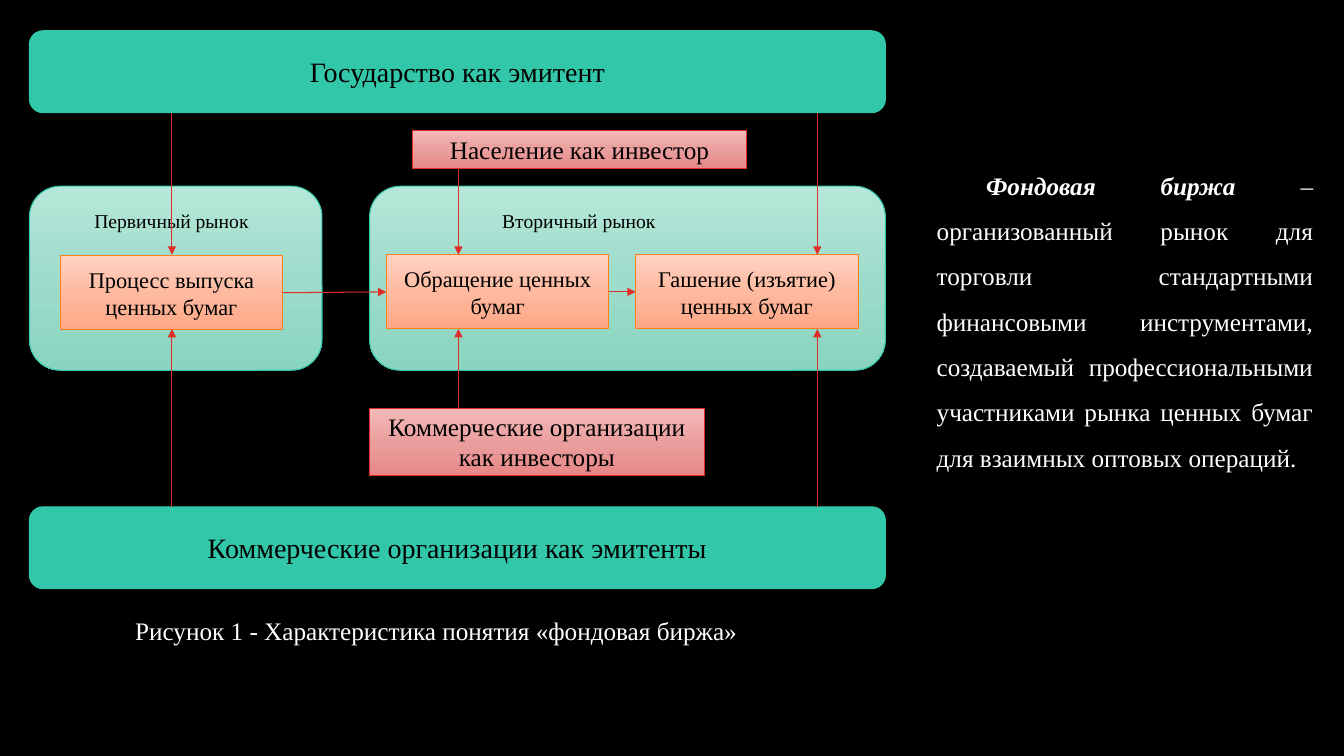
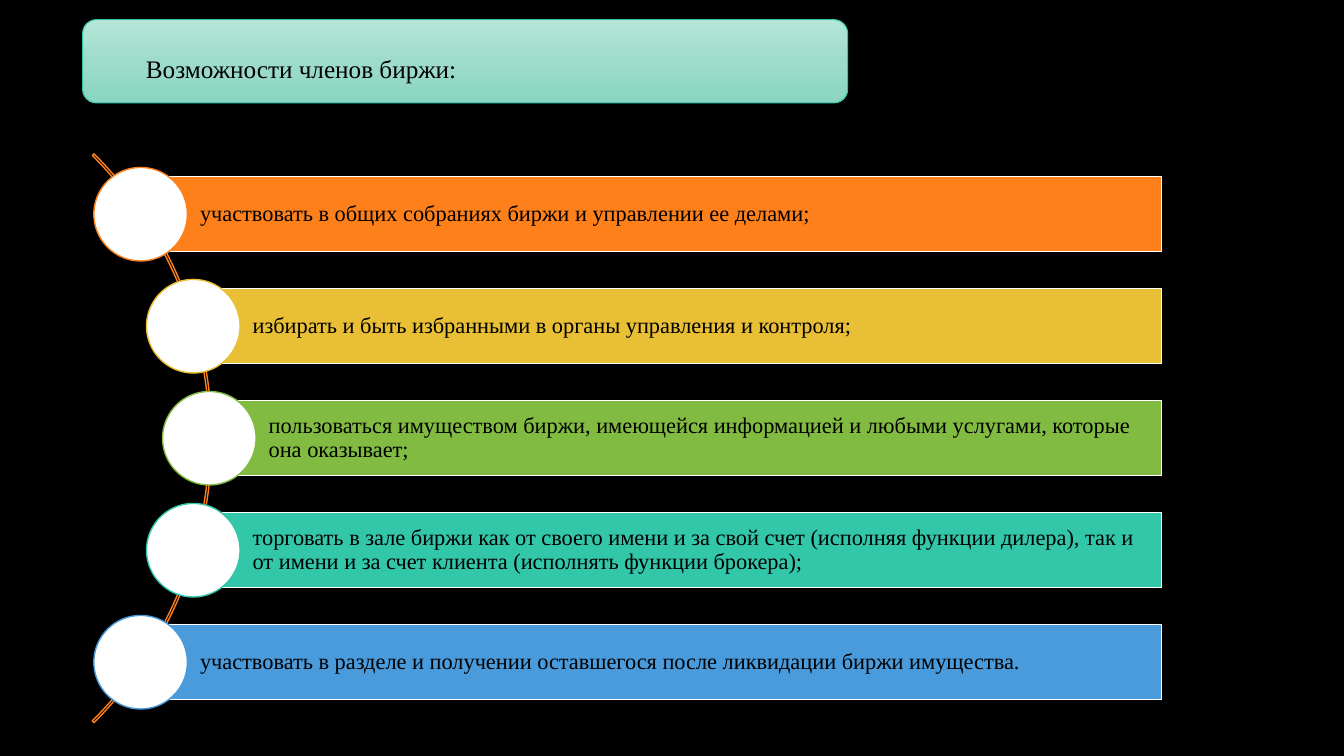
from copy import deepcopy
from dataclasses import dataclass
from math import sqrt

from pptx import Presentation
from pptx.dml.color import RGBColor
from pptx.enum.shapes import MSO_CONNECTOR, MSO_SHAPE
from pptx.enum.text import MSO_ANCHOR, MSO_AUTO_SIZE, PP_ALIGN
from pptx.oxml.ns import qn
from pptx.oxml.xmlchemy import OxmlElement
from pptx.util import Pt


@dataclass(frozen=True)
class Theme:
    font: str = "Times New Roman"
    black: str = "000000"
    white: str = "FFFFFF"
    teal: str = "32C7A9"
    orange: str = "FE801A"
    yellow: str = "E9BF35"
    green: str = "81BB42"
    blue: str = "4A9BDC"
    red: str = "DF2E28"
    mint_fade: tuple = ("B6E7D9", "9DDBCA", "89D5C0")
    peach_fade: tuple = ("FFD2C2", "FEB99F", "FEA785")
    rose_fade: tuple = ("F3BAB9", "EA9E9D", "E78887")
    band_size: int = 20
    body_size: int = 18
    step_size: int = 16
    label_size: int = 14
    first_line: float = 35.3
    body_spacing: float = 1.5
    thin: float = 0.75


THEME = Theme()
FADE_STOPS = (0, 0.52, 1)


def rgb(value):
    return RGBColor.from_string(value)


def new_slide(deck):
    slide = deck.slides.add_slide(deck.slide_layouts[6])
    slide.background.fill.solid()
    slide.background.fill.fore_color.rgb = rgb(THEME.black)
    return slide


def write_text(frame, text, lead="", size=THEME.body_size, color=THEME.black,
               align=PP_ALIGN.CENTER, anchor=MSO_ANCHOR.MIDDLE,
               spacing=None, first_line=0, insets=None):
    """Write one paragraph, with an optional bold italic lead-in."""
    frame.word_wrap = True
    frame.vertical_anchor = anchor
    if insets:
        (frame.margin_left, frame.margin_top,
         frame.margin_right, frame.margin_bottom) = map(Pt, insets)
    paragraph = frame.paragraphs[0]
    paragraph.alignment = align
    if spacing:
        paragraph.line_spacing = spacing
    if first_line:
        paragraph._p.get_or_add_pPr().set("indent", str(Pt(first_line)))
    for words, stressed in ((lead, True), (text, False)):
        if words:
            run = paragraph.add_run()
            run.text = words
            run.font.name = THEME.font
            run.font.size = Pt(size)
            run.font.color.rgb = rgb(color)
            run.font.bold = run.font.italic = stressed


def fade(shape, colors):
    """Fill a shape with a three-stop gradient from top to bottom."""
    shape.fill.gradient()
    shape.fill.gradient_angle = 270
    stops = shape._element.spPr.find(qn("a:gradFill")).find(qn("a:gsLst"))
    stops.append(deepcopy(stops[0]))
    for stop, position, color in zip(shape.fill.gradient_stops, FADE_STOPS, colors):
        stop.position = position
        stop.color.rgb = rgb(color)


def add_box(slide, kind, at, fill, line, width=THEME.thin, text="", **style):
    shape = slide.shapes.add_shape(kind, *map(Pt, at))
    shape.shadow.inherit = False
    if fill is None:
        shape.fill.background()
    elif isinstance(fill, tuple):
        fade(shape, fill)
    else:
        shape.fill.solid()
        shape.fill.fore_color.rgb = rgb(fill)
    shape.line.color.rgb = rgb(line)
    shape.line.width = Pt(width)
    if text:
        write_text(shape.text_frame, text, **style)
    return shape


def add_note(slide, at, text, **style):
    frame = slide.shapes.add_textbox(*map(Pt, at)).text_frame
    write_text(frame, text, anchor=MSO_ANCHOR.TOP, **style)
    frame.auto_size = MSO_AUTO_SIZE.SHAPE_TO_FIT_TEXT


def add_arrow(slide, *ends):
    arrow = slide.shapes.add_connector(MSO_CONNECTOR.STRAIGHT, *map(Pt, ends))
    arrow.line.color.rgb = rgb(THEME.red)
    arrow.line.width = Pt(THEME.thin)
    head = OxmlElement("a:tailEnd")
    head.set("type", "triangle")
    arrow.line._get_or_add_ln().append(head)
    arrow._element.spPr.append(OxmlElement("a:effectLst"))


def build_market(deck):
    slide = new_slide(deck)
    left, width = 21, 611.5
    state_top, firms_top, band_height = 22, 362, 58.5
    step_top, step_width, step_height = 182, 159, 53
    step_bottom = step_top + step_height

    # Issuers
    for top, issuer in ((state_top, "Государство как эмитент"),
                        (firms_top, "Коммерческие организации как эмитенты")):
        add_box(slide, MSO_SHAPE.ROUNDED_RECTANGLE, (left, top, width, band_height),
                THEME.teal, THEME.teal, text=issuer, size=THEME.band_size)

    # Markets
    for market_left, market_width, label_left, market in (
            (left, 209, 41.5, "Первичный рынок"),
            (264, 368.5, 332.5, "Вторичный рынок")):
        add_box(slide, MSO_SHAPE.ROUNDED_RECTANGLE,
                (market_left, 133, market_width, 131.5), THEME.mint_fade, THEME.teal)
        add_note(slide, (label_left, 145.5, 162, 24.5), market, size=THEME.label_size)

    # Life of a security
    issue, trade, redemption = 43, 276, 454
    for step_left, drop, step in ((issue, 0.6, "Процесс выпуска ценных бумаг"),
                                  (trade, 0, "Обращение ценных бумаг"),
                                  (redemption, 0, "Гашение (изъятие) ценных бумаг")):
        add_box(slide, MSO_SHAPE.RECTANGLE,
                (step_left, step_top + drop, step_width, step_height),
                THEME.peach_fade, THEME.orange, text=step, size=THEME.step_size)

    # Investors
    public_bottom, investors_top = 120.5, 291.5
    for at, investor in (
            ((294.5, 93, 239, public_bottom - 93), "Население как инвестор"),
            ((264, investors_top, 239, 48), "Коммерческие организации как инвесторы")):
        add_box(slide, MSO_SHAPE.RECTANGLE, at, THEME.rose_fade, THEME.red, text=investor)

    # Arrows into each step from above and below, then between steps
    state_bottom = state_top + band_height
    for x, above, below in ((122.8, state_bottom, firms_top),
                            (327.5, public_bottom, investors_top),
                            (583.8, state_bottom, firms_top)):
        add_arrow(slide, x, above, x, step_top)
        add_arrow(slide, x, below, x, step_bottom)
    middle = step_top + step_height / 2
    add_arrow(slide, issue + step_width, middle + 0.6, trade, middle)
    add_arrow(slide, trade + step_width, middle, redemption, middle)

    # Caption and definition
    prose = dict(color=THEME.white, spacing=THEME.body_spacing,
                 first_line=THEME.first_line)
    add_note(slide, (54, 425, 480, 36),
             "Рисунок 1 - Характеристика понятия «фондовая биржа»", **prose)
    add_note(slide, (662, 107, 283, 232.5),
             "– организованный рынок для торговли стандартными финансовыми "
             "инструментами, создаваемый профессиональными участниками рынка "
             "ценных бумаг для взаимных оптовых операций.",
             lead="Фондовая биржа ", align=PP_ALIGN.JUSTIFY, **prose)


def build_rights(deck):
    slide = new_slide(deck)
    rights = (
        (THEME.orange, "участвовать в общих собраниях биржи и управлении ее делами;"),
        (THEME.yellow, "избирать и быть избранными в органы управления и контроля;"),
        (THEME.green, "пользоваться имуществом биржи, имеющейся информацией и любыми "
                      "услугами, которые она оказывает;"),
        (THEME.teal, "торговать в зале биржи как от своего имени и за свой счет "
                     "(исполняя функции дилера), так и от имени и за счет клиента "
                     "(исполнять функции брокера);"),
        (THEME.blue, "участвовать в разделе и получении оставшегося после ликвидации "
                     "биржи имущества."),
    )

    # Heading
    add_box(slide, MSO_SHAPE.ROUNDED_RECTANGLE, (59, 14, 546.5, 59.5),
            THEME.mint_fade, THEME.teal, text="Возможности членов биржи:",
            align=PP_ALIGN.JUSTIFY, spacing=THEME.body_spacing,
            first_line=THEME.first_line)

    # Arc that carries the circles
    center_x, center_y, radius = -136, 313, 287.3
    arc = add_box(slide, MSO_SHAPE.BLOCK_ARC,
                  (center_x - radius, center_y - radius, 2 * radius, 2 * radius),
                  None, THEME.orange, width=1)
    for index, value in enumerate((189, 27, 0.003)):
        arc.adjustments[index] = value

    # Bars start at the circle centres, which sit on the arc
    seat_radius, pitch, bar_height, bar_right, circle = 285.5, 80, 53.4, 829.5, 66.8
    for row, (color, right) in enumerate(rights):
        offset = (row - len(rights) // 2) * pitch
        x, y = center_x + sqrt(seat_radius ** 2 - offset ** 2), center_y + offset
        add_box(slide, MSO_SHAPE.RECTANGLE,
                (x, y - bar_height / 2, bar_right - x, bar_height),
                color, THEME.white, width=1, text=right, size=THEME.step_size,
                align=PP_ALIGN.LEFT, spacing=0.9, insets=(42.4, 3, 3, 3))
        add_box(slide, MSO_SHAPE.OVAL,
                (x - circle / 2, y - circle / 2, circle, circle),
                THEME.white, color, width=1)


def main():
    deck = Presentation()
    deck.slide_width, deck.slide_height = Pt(960), Pt(540)
    build_market(deck)
    build_rights(deck)
    deck.save("out.pptx")


if __name__ == "__main__":
    main()
